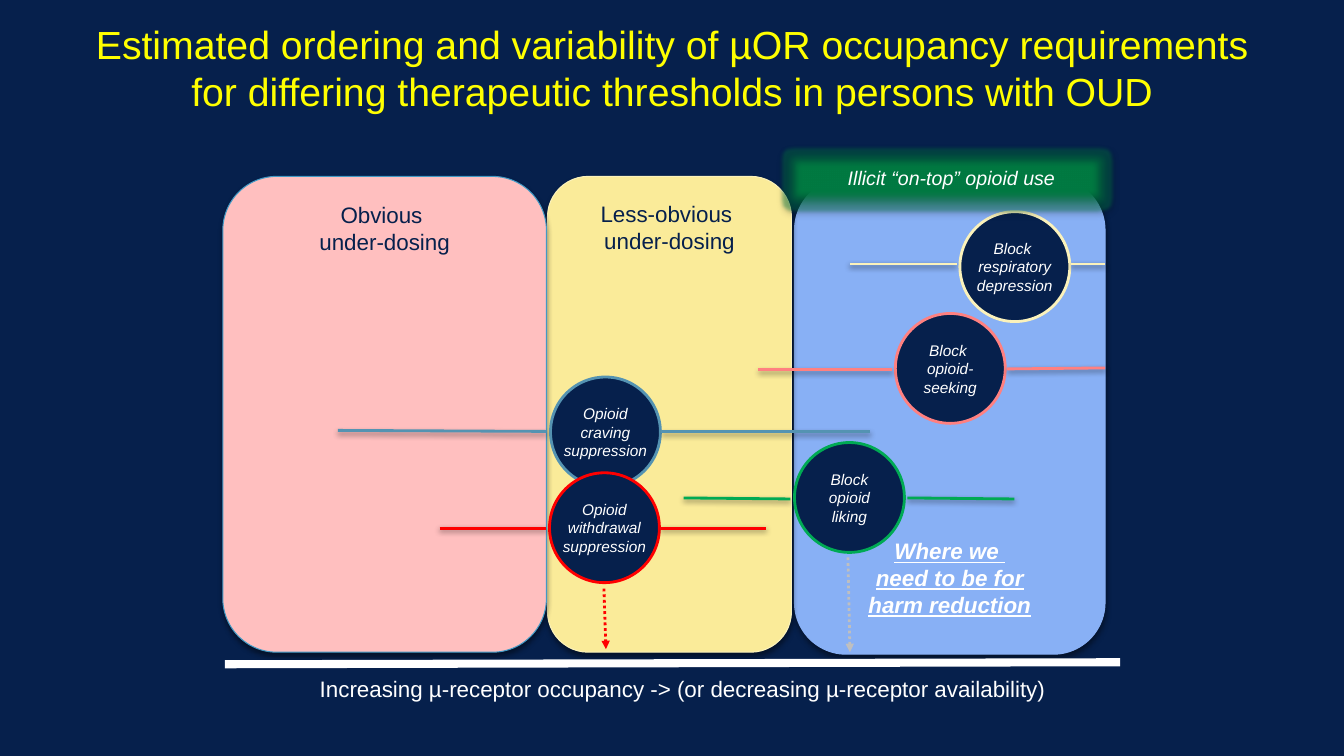
"""Build the slide on receptor occupancy requirements for therapeutic thresholds."""
from dataclasses import dataclass

from lxml.etree import SubElement
from pptx import Presentation
from pptx.dml.color import RGBColor
from pptx.enum.dml import MSO_LINE
from pptx.enum.shapes import MSO_CONNECTOR, MSO_SHAPE
from pptx.enum.text import MSO_ANCHOR as ANCHOR, PP_ALIGN as ALIGN
from pptx.oxml.ns import qn
from pptx.util import Emu, Pt

PX = 9144
NAVY, WHITE, YELLOW, GREEN = "06204C", "FFFFFF", "FFFF00", "007A42"
DIAMETER = 109

Box = tuple[int, int, int, int]


@dataclass(frozen=True)
class Style:
    size: int
    color: str = WHITE
    bold: bool = False
    italic: bool = False
    underline: bool = False


@dataclass(frozen=True)
class Panel:
    box: Box
    fill: str
    line: str
    lines: tuple[str, ...]
    style: Style
    anchor: ANCHOR
    margin: int


@dataclass(frozen=True)
class Threshold:
    left: int
    top: int
    color: str
    lines: tuple[str, ...]
    bars: tuple[Box, Box]


@dataclass(frozen=True)
class Arrow:
    ends: Box
    color: str


HEADING = Style(16, NAVY)
GOAL = Style(16, bold=True, italic=True, underline=True)
LABEL = Style(11, italic=True)

PANELS = (
    Panel((788, 177, 308, 472), "88B0F5", "88B0F5",
          ("Where we ", "need to be for", "harm reduction"), GOAL, ANCHOR.BOTTOM, 21),
    Panel((543, 175, 242, 472), "FAEB99", "FBF2BB",
          ("Less-obvious ", "under-dosing"), HEADING, ANCHOR.TOP, 12),
    Panel((221, 175, 321, 472), "FFBFBF", "4199C5",
          ("Obvious ", "under-dosing"), HEADING, ANCHOR.TOP, 9),
)
THRESHOLDS = (
    Threshold(546, 374, "5493B2", ("Opioid", "craving", "suppression"),
              ((335, 427, 542, 428), (656, 428, 863, 428))),
    Threshold(545, 469, "FF0000", ("Opioid", "withdrawal", "suppression"),
              ((436, 524, 542, 524), (655, 524, 760, 524))),
    Threshold(788, 439, "00AA54", ("Block", "opioid", "liking"),
              ((678, 494, 784, 495), (900, 494, 1006, 495))),
    Threshold(952, 210, "FBF2BB", ("Block ", "respiratory", "depression"),
              ((843, 262, 949, 262), (1062, 262, 1096, 262))),
    Threshold(888, 311, "FF8080", ("Block ", "opioid-", "seeking"),
              ((752, 367, 885, 367), (999, 366, 1096, 365))),
)
ARROWS = (
    Arrow((599, 584, 601, 644), "FF0000"),
    Arrow((841, 553, 843, 647), "BFBFBF"),
)


def px(*lengths: int) -> list[Emu]:
    """Turn px lengths into EMU."""
    return [Emu(length * PX) for length in lengths]


def rgb(color: str) -> RGBColor:
    """Turn a hex string into a colour."""
    return RGBColor.from_string(color)


def add_effect(effects, tag: str, color: str, alpha: int, **attrs: str) -> None:
    """Add one coloured effect to an effect list."""
    effect = SubElement(effects, qn(tag), attrs)
    fill = SubElement(effect, qn("a:srgbClr"), val=color)
    SubElement(fill, qn("a:alpha"), val=str(alpha * 1000))


def set_effects(s, shadow: bool = True, glow: str = "") -> None:
    """Replace the theme effects with a drop shadow, a soft glow, both or none."""
    effects = SubElement(s._element.spPr, qn("a:effectLst"))
    if glow:
        add_effect(effects, "a:glow", glow, 40, rad="63500")
    if shadow:
        add_effect(effects, "a:outerShdw", "000000", 43, blurRad="50800",
                   dist="25400", dir="5400000", rotWithShape="0")
    if glow:
        SubElement(effects, qn("a:softEdge"), rad="63500")


def write(s, lines: tuple[str, ...], style: Style, align: ALIGN = ALIGN.CENTER,
          anchor: ANCHOR = ANCHOR.MIDDLE, wrap: bool = True) -> None:
    """Write one paragraph per line into a shape."""
    tf = s.text_frame
    tf.word_wrap = wrap
    tf.vertical_anchor = anchor
    for i, line in enumerate(lines):
        p = tf.add_paragraph() if i else tf.paragraphs[0]
        p.alignment = align
        r = p.add_run()
        r.text = line
        r.font.name = "Arial"
        r.font.size = Pt(style.size)
        r.font.color.rgb = rgb(style.color)
        r.font.bold = style.bold
        r.font.italic = style.italic
        r.font.underline = style.underline


def add_shape(slide, kind: MSO_SHAPE, box: Box, fill: str, line: str, width: float,
              shadow: bool = True, glow: str = ""):
    """Add a filled and outlined preset shape."""
    s = slide.shapes.add_shape(kind, *px(*box))
    s.fill.solid()
    s.fill.fore_color.rgb = rgb(fill)
    s.line.color.rgb = rgb(line)
    s.line.width = Pt(width)
    set_effects(s, shadow, glow)
    return s


def add_line(slide, ends: Box, color: str, width: float = 2, shadow: bool = False,
             arrow: bool = False) -> None:
    """Add a straight line, or a dotted arrow."""
    s = slide.shapes.add_connector(MSO_CONNECTOR.STRAIGHT, *px(*ends))
    s.line.color.rgb = rgb(color)
    s.line.width = Pt(width)
    if arrow:
        s.line.dash_style = MSO_LINE.ROUND_DOT
        SubElement(s._element.spPr.find(qn("a:ln")), qn("a:tailEnd"), type="triangle")
    set_effects(s, shadow)


def add_text(slide, box: Box, text: str, style: Style, **layout) -> None:
    """Add a text box with one paragraph."""
    write(slide.shapes.add_textbox(*px(*box)), (text,), style, **layout)


def add_panel(slide, panel: Panel) -> None:
    """Add a dosing panel with its heading at the top or bottom."""
    s = add_shape(slide, MSO_SHAPE.ROUNDED_RECTANGLE, panel.box, panel.fill, panel.line, 0.75)
    write(s, panel.lines, panel.style, anchor=panel.anchor)
    s.text_frame.margin_top, s.text_frame.margin_bottom = px(panel.margin, panel.margin)


def add_threshold(slide, item: Threshold) -> None:
    """Add a labelled circle with its variability bars."""
    box = (item.left, item.top, DIAMETER, DIAMETER)
    s = add_shape(slide, MSO_SHAPE.OVAL, box, NAVY, item.color, 2, shadow=False)
    write(s, item.lines, LABEL, wrap=False)
    for bar in item.bars:
        add_line(slide, bar, item.color, shadow=True)


def main() -> None:
    """Build and save the slide."""
    prs = Presentation()
    prs.slide_width, prs.slide_height = px(1333, 750)
    slide = prs.slides.add_slide(prs.slide_layouts[6])
    slide.background.fill.solid()
    slide.background.fill.fore_color.rgb = rgb(NAVY)
    for panel in PANELS:
        add_panel(slide, panel)
    add_text(slide, (75, 14, 1183, 105),
             "Estimated ordering and variability of µOR occupancy requirements "
             "for differing therapeutic thresholds in persons with OUD", Style(28, YELLOW))
    add_line(slide, (223, 659, 1111, 657), WHITE, 5.75)
    add_text(slide, (304, 665, 746, 37),
             "Increasing µ-receptor occupancy -> (or decreasing µ-receptor availability)",
             Style(16))
    for arrow in ARROWS:
        add_line(slide, arrow.ends, arrow.color, arrow=True)
    for item in THRESHOLDS:
        add_threshold(slide, item)
    add_shape(slide, MSO_SHAPE.RECTANGLE, (784, 155, 310, 46), GREEN, "4199C5", 0.75, glow=GREEN)
    add_text(slide, (831, 159, 227, 34), "Illicit “on-top” opioid use",
             Style(14, italic=True), align=ALIGN.LEFT, wrap=False)
    prs.save("out.pptx")


if __name__ == "__main__":
    main()
